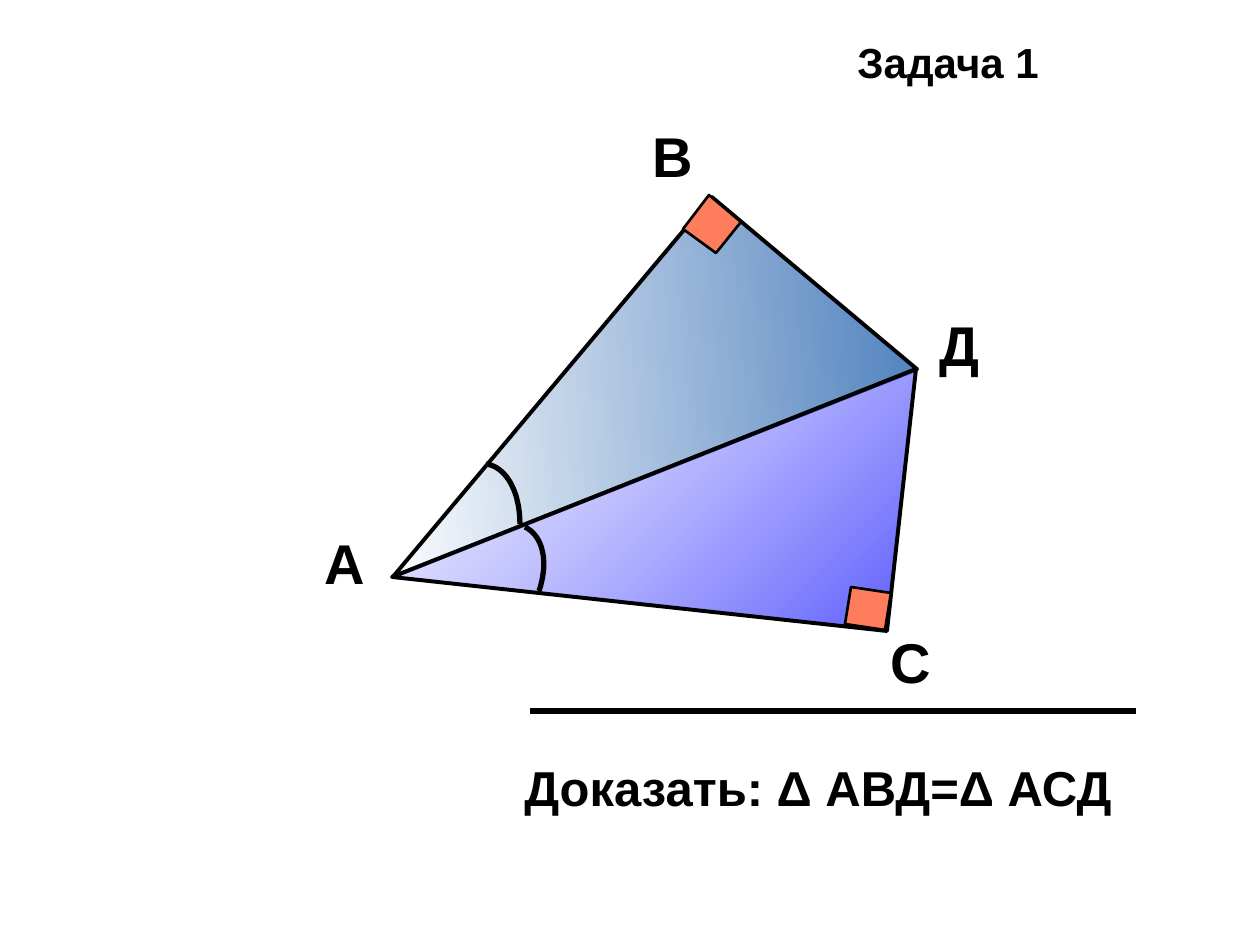
import pptx
import pptx.dml.color
import pptx.enum.shapes
import pptx.oxml.ns
import pptx.util
from lxml import etree

PX = 914400 / 126  # EMU in one px
THEME = {
    "font": "Arial", "ink": "000000", "blue": "4F81BD", "deep": "0000FF",
    "white": "FFFFFF", "mark": "FF7C5D",
    "title": 24, "label": 32, "claim": 28,
}


def emu(*nums):
    return [pptx.util.Emu(round(n * PX)) for n in nums]


def write(text, box, size, wrap=True):
    frame = slide.shapes.add_textbox(*emu(*box)).text_frame
    frame.word_wrap = wrap
    run = frame.paragraphs[0].add_run()
    run.text = text
    run.font.name = THEME["font"]
    run.font.size = pptx.util.Pt(size)
    run.font.bold = True
    run.font.color.rgb = pptx.dml.color.RGBColor.from_string(THEME["ink"])


rgb = pptx.dml.color.RGBColor.from_string
qn = pptx.oxml.ns.qn
deck = pptx.Presentation()
deck.slide_width, deck.slide_height = emu(1260, 945)
slide = deck.slides.add_slide(deck.slide_layouts[6])

# Heading
write("Задача 1", (845, 30, 222, 63), THEME["title"])

# Upper triangle
upper = slide.shapes.add_shape(
    pptx.enum.shapes.MSO_SHAPE.RIGHT_TRIANGLE, *emu(407, 339, 496, 268))
upper.rotation = 130

# Lower triangle
pen = slide.shapes.build_freeform(392, 577, scale=PX)
pen.add_line_segments([(916, 369), (887, 631)], close=True)
lower = pen.convert_to_shape()

# Gradients: colour and opacity in percent at each end
for shape, ends in (
    (upper, (("blue", 100), ("white", 100))),
    (lower, (("white", 51), ("deep", 64))),
):
    shape.shadow.inherit = False
    shape.line.color.rgb = rgb(THEME["ink"])
    shape.line.width = pptx.util.Pt(2.25)
    shape.fill.gradient()
    shape.fill.gradient_angle = 315
    for stop, place, (tint, share) in zip(shape.fill.gradient_stops, (0, 1), ends):
        stop.position = place
        stop.color.rgb = rgb(THEME[tint])
    tones = shape.element.spPr.find(qn("a:gradFill")).iter(qn("a:srgbClr"))
    for tone, (tint, share) in zip(tones, ends):
        if share < 100:
            etree.SubElement(tone, qn("a:alpha")).set("val", str(share * 1000))

# Angle arcs, each a cubic curve through 24 steps
for a, b, c, d in (
    ((486, 464), (507, 467), (520, 493), (520, 524)),
    ((525, 527), (543, 536), (549, 562), (539, 591)),
):
    dots = []
    for step in range(1, 25):
        t = step / 24
        u = 1 - t
        dots.append([
            u**3 * p + 3 * u * u * t * q + 3 * u * t * t * r + t**3 * s
            for p, q, r, s in zip(a, b, c, d)])
    # Ten local units to a px keep the curve smooth
    pen = slide.shapes.build_freeform(a[0] * 10, a[1] * 10, scale=PX / 10)
    pen.add_line_segments([(x * 10, y * 10) for x, y in dots], close=False)
    arc = pen.convert_to_shape()
    arc.shadow.inherit = False
    arc.fill.background()
    arc.line.color.rgb = rgb(THEME["ink"])
    arc.line.width = pptx.util.Pt(3)

# Right angle marks at B and C
for first, *rest in (
    ((709, 195), (741, 222), (716, 253), (683, 229)),
    ((851, 587), (891, 593), (885, 630), (845, 624)),
):
    pen = slide.shapes.build_freeform(*first, scale=PX)
    pen.add_line_segments(rest, close=True)
    mark = pen.convert_to_shape()
    mark.shadow.inherit = False
    mark.fill.solid()
    mark.fill.fore_color.rgb = rgb(THEME["mark"])
    mark.line.color.rgb = rgb(THEME["ink"])
    mark.line.width = pptx.util.Pt(1.5)

# Vertex labels
for name, x, y in (("А", 312, 522), ("В", 640, 115), ("С", 878, 621), ("Д", 927, 304)):
    write(name, (x, y, 66, 79), THEME["label"])

# Claim under its rule
write("Доказать: Δ АВД=Δ АСД", (512, 751, 644, 72), THEME["claim"], wrap=False)
rule = slide.shapes.add_connector(
    pptx.enum.shapes.MSO_CONNECTOR.STRAIGHT, *emu(530, 711, 1136, 711))
rule.line.color.rgb = rgb(THEME["ink"])
rule.line.width = pptx.util.Pt(3)
etree.SubElement(rule.element.spPr, qn("a:effectLst"))

deck.save("out.pptx")
